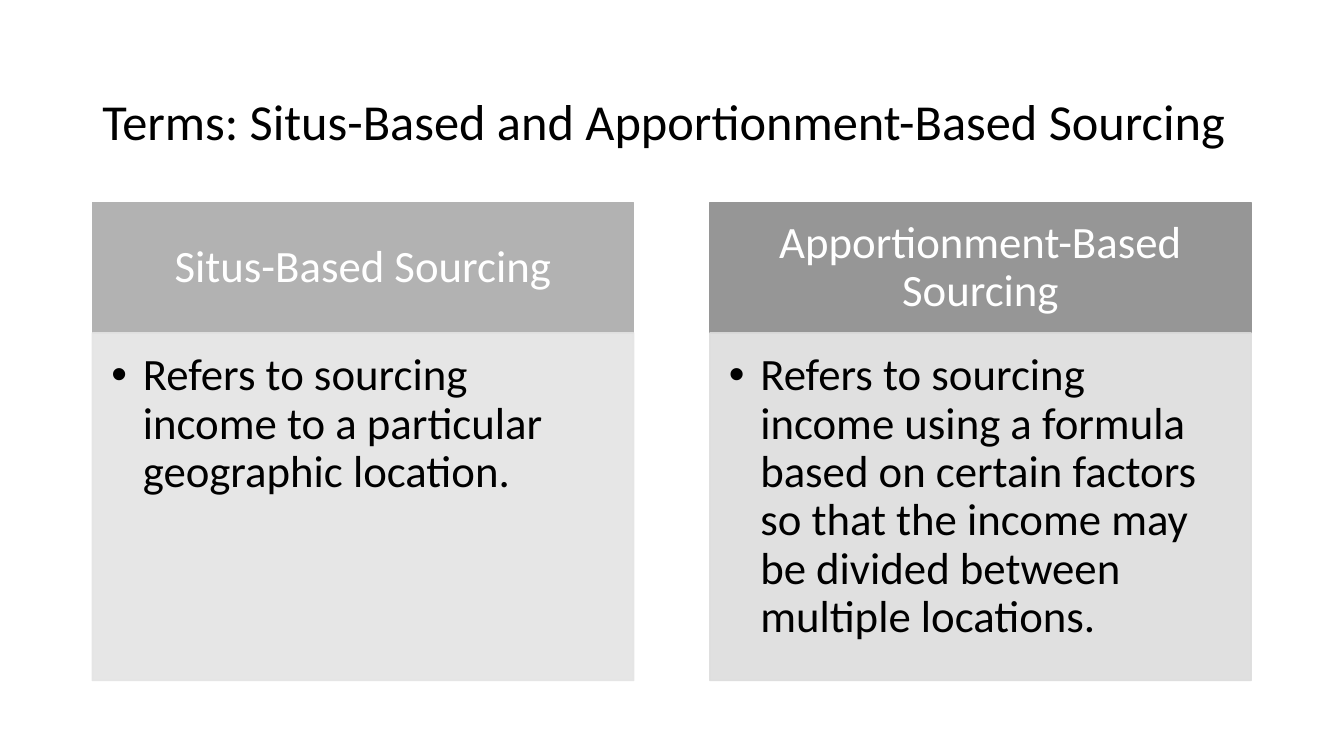
import pptx
import pptx.util
import pptx.dml.color
import pptx.enum.shapes
import pptx.enum.text
import pptx.oxml.ns
import lxml.etree

Cm = pptx.util.Cm
ALIGN = pptx.enum.text.PP_ALIGN
ANCHOR = pptx.enum.text.MSO_ANCHOR
COLORS = {
    "text": "000000",
    "heading": "FFFFFF",
    "situs": "B2B2B2",
    "situs_body": "E4E4E4",
    "apportionment": "969696",
    "apportionment_body": "DDDDDD",
}
TERMS = [
    ("situs", "Situs-Based Sourcing",
     "Refers to sourcing income to a particular geographic location."),
    ("apportionment", "Apportionment-Based Sourcing",
     "Refers to sourcing income using a formula based on certain factors "
     "so that the income may be divided between multiple locations."),
]


def rgb(name):
    """Return the named colour."""
    return pptx.dml.color.RGBColor.from_string(COLORS[name])


def add_element(parent, tag, **attributes):
    """Append a DrawingML element to its parent."""
    return lxml.etree.SubElement(parent, pptx.oxml.ns.qn(tag), attributes)


def write(frame, wording, size, color, anchor, align, insets):
    """Write one paragraph into a text frame and return it."""
    frame.word_wrap = True
    frame.vertical_anchor = anchor
    frame.margin_left, frame.margin_top, frame.margin_right, frame.margin_bottom = map(Cm, insets)
    paragraph = frame.paragraphs[0]
    paragraph.alignment = align
    paragraph.line_spacing = 0.9
    run = paragraph.add_run()
    run.text = wording
    run.font.name = "Calibri"
    run.font.size = pptx.util.Pt(size)
    run.font.color.rgb = rgb(color)
    return paragraph


def add_panel(slide, left, top, width, height, color, opacity=100):
    """Add a filled rectangle with a thin line of the same colour."""
    panel = slide.shapes.add_shape(
        pptx.enum.shapes.MSO_SHAPE.RECTANGLE, Cm(left), Cm(top), Cm(width), Cm(height))
    panel.shadow.inherit = False
    panel.fill.solid()
    panel.fill.fore_color.rgb = rgb(color)
    panel.line.color.rgb = rgb(color)
    panel.line.width = pptx.util.Pt(1)
    if opacity < 100:
        for shade in panel.element.spPr.iter(pptx.oxml.ns.qn("a:srgbClr")):
            add_element(shade, "a:alpha", val=str(opacity * 1000))
    return panel


def add_title(slide, left, top, width, height):
    """Place the slide title in its box."""
    title = slide.shapes.add_textbox(Cm(left), Cm(top), Cm(width), Cm(height))
    write(title.text_frame, "Terms: Situs-Based and Apportionment-Based Sourcing",
          36, "text", ANCHOR.MIDDLE, ALIGN.LEFT, (0.25, 0.13, 0.25, 0.13))


def add_term(slide, left, top, width, height, term):
    """Place a term's heading above its bulleted definition."""
    color, name, definition = term
    heading_height = 3.28
    heading = add_panel(slide, left, top, width, heading_height, color)
    write(heading.text_frame, name, 32, "heading", ANCHOR.MIDDLE, ALIGN.CENTER,
          (0.63, 0.36, 0.63, 0.36))
    body = add_panel(slide, left, top + heading_height, width, height - heading_height,
                     color + "_body", 90)
    bullet = write(body.text_frame, definition, 32, "text", ANCHOR.TOP, ALIGN.LEFT,
                   (0.48, 0.48, 0.63, 0.71))
    properties = bullet._p.get_or_add_pPr()
    properties.set("marL", str(Cm(0.79)))
    properties.set("indent", str(-Cm(0.79)))
    add_element(properties, "a:buFont", typeface="Arial")
    add_element(properties, "a:buChar", char="•")


def main():
    """Build and save the slide."""
    deck = pptx.Presentation()
    deck.slide_width, deck.slide_height = Cm(33.87), Cm(19.05)
    slide = deck.slides.add_slide(deck.slide_layouts[6])
    left, pitch = 2.33, 15.56
    add_title(slide, left, 1.55, 29.21, 3.15)
    for column, term in enumerate(TERMS):
        add_term(slide, left + column * pitch, 5.11, 13.64, 12.04, term)
    deck.save("out.pptx")


if __name__ == "__main__":
    main()
